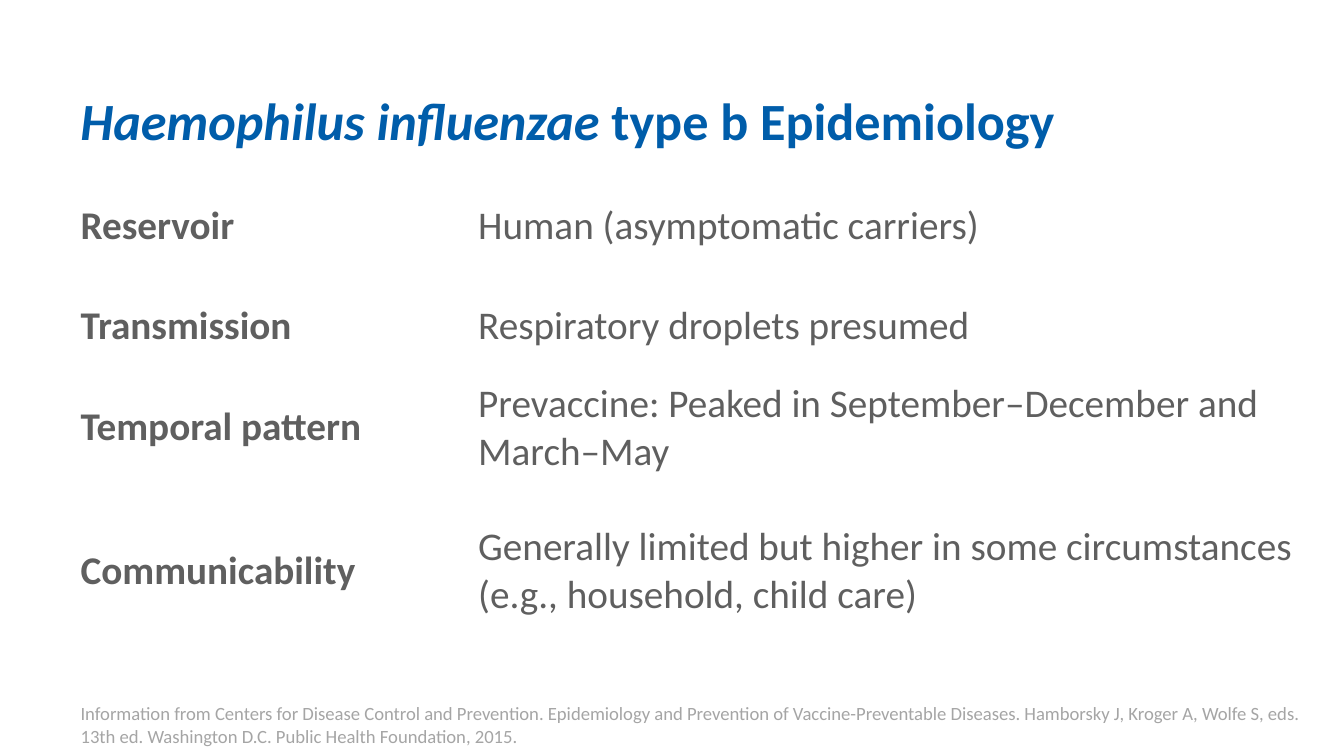
from pptx import Presentation
from pptx.dml.color import RGBColor
from pptx.enum.text import MSO_ANCHOR
from pptx.util import Pt

BLUE = RGBColor(0x00, 0x5D, 0xAA)
GRAY = RGBColor(0x5F, 0x5F, 0x5F)
LIGHT_GRAY = RGBColor(0xA5, 0xA5, 0xA5)
FONT = "Calibri"
BOTTOM, MIDDLE = MSO_ANCHOR.BOTTOM, MSO_ANCHOR.MIDDLE

COL_WIDTHS = (213, 453.6)
ROW_HEIGHTS = (55.4, 51.8, 55.4, 97.9)
FACTS = (
    ("Reservoir", "Human (asymptomatic carriers)"),
    ("Transmission", "Respiratory droplets presumed"),
    ("Temporal pattern", "Prevaccine: Peaked in September–December and March–May"),
    ("Communicability",
     "Generally limited but higher in some circumstances (e.g., household, child care)"),
)
SOURCE = (
    "Information from Centers for Disease Control and Prevention. "
    "Epidemiology and Prevention of Vaccine-Preventable Diseases. "
    "Hamborsky J, Kroger A, Wolfe S, eds. 13th ed. "
    "Washington D.C. Public Health Foundation, 2015."
)


def add_text(p, text, size, color, bold=False, italic=False):
    r = p.add_run()
    r.text = text
    r.font.name = FONT
    r.font.size = Pt(size)
    r.font.color.rgb = color
    r.font.bold = bold
    r.font.italic = italic


def add_box(s, x, y, w, h):
    tf = s.shapes.add_textbox(Pt(x), Pt(y), Pt(w), Pt(h)).text_frame
    tf.word_wrap = True
    return tf


def add_title(s, x, y, w, h):
    tf = add_box(s, x, y, w, h)
    tf.vertical_anchor = BOTTOM
    p = tf.paragraphs[0]
    p.line_spacing = Pt(30)
    add_text(p, "Haemophilus influenzae ", size=28, color=BLUE, bold=True, italic=True)
    add_text(p, "type b Epidemiology", size=28, color=BLUE, bold=True)


def add_facts(s, x, y, w, h):
    table = s.shapes.add_table(len(FACTS), len(COL_WIDTHS),
                               Pt(x), Pt(y), Pt(w), Pt(h)).table
    table.first_row = False
    table.horz_banding = False
    for col, width in zip(table.columns, COL_WIDTHS):
        col.width = Pt(width)
    for row, height, fact in zip(table.rows, ROW_HEIGHTS, FACTS):
        row.height = Pt(height)
        for i, (cell, text) in enumerate(zip(row.cells, fact)):
            cell.fill.background()
            cell.vertical_anchor = MIDDLE
            cell.margin_top = cell.margin_bottom = Pt(2.9)
            add_text(cell.text_frame.paragraphs[0], text,
                     size=21, color=GRAY, bold=i == 0)


def add_source(s, x, y, w, h):
    tf = add_box(s, x, y, w, h)
    tf.margin_left = Pt(43.2)
    add_text(tf.paragraphs[0], SOURCE, size=10, color=LIGHT_GRAY)


def main():
    prs = Presentation()
    prs.slide_width, prs.slide_height = Pt(720), Pt(405)
    s = prs.slides.add_slide(prs.slide_layouts[6])
    add_title(s, 36, 16.5, 648, 67.7)
    add_source(s, 0, 372.5, 720, 32.5)
    add_facts(s, 36, 93.6, sum(COL_WIDTHS), sum(ROW_HEIGHTS))
    prs.save("out.pptx")


if __name__ == "__main__":
    main()
